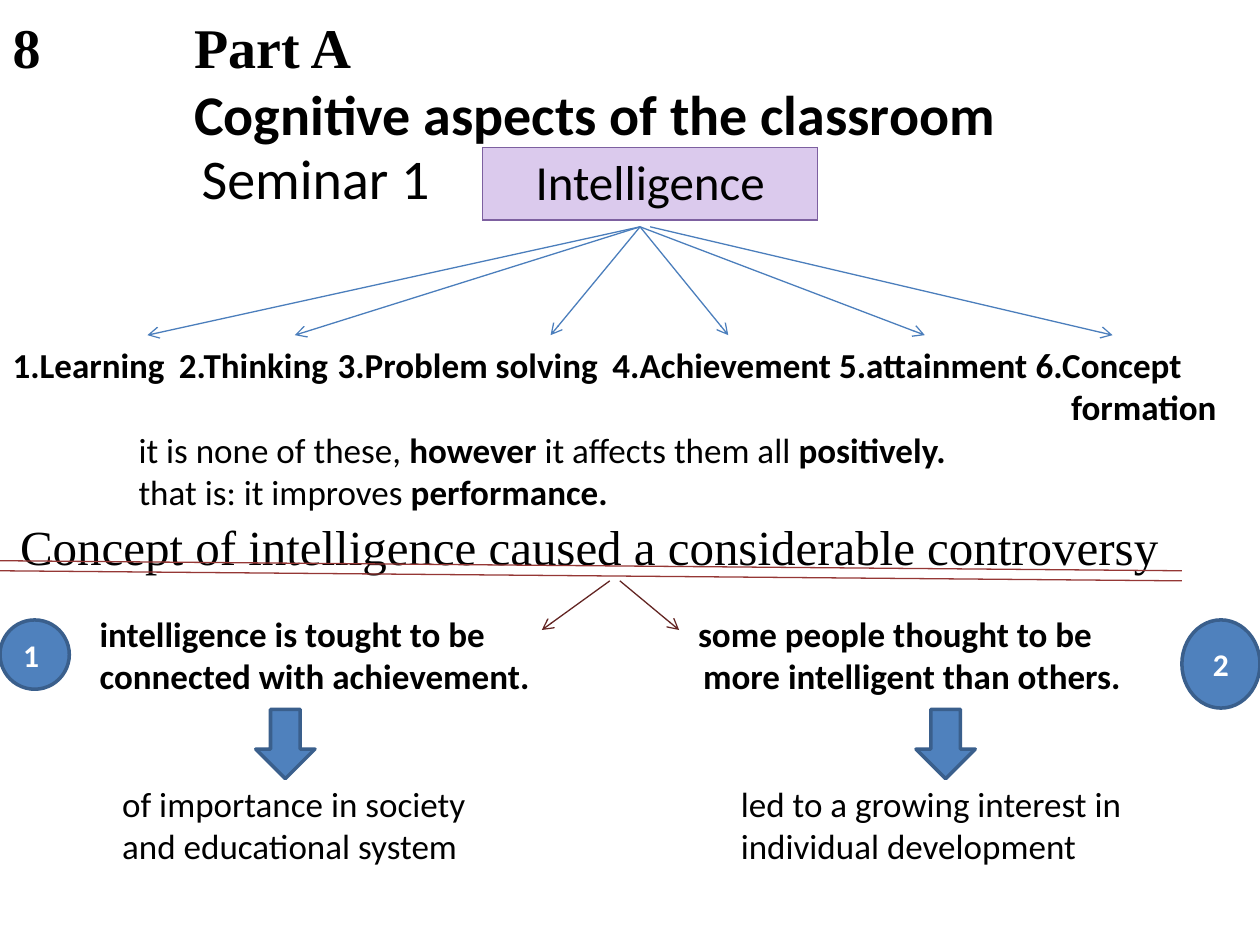
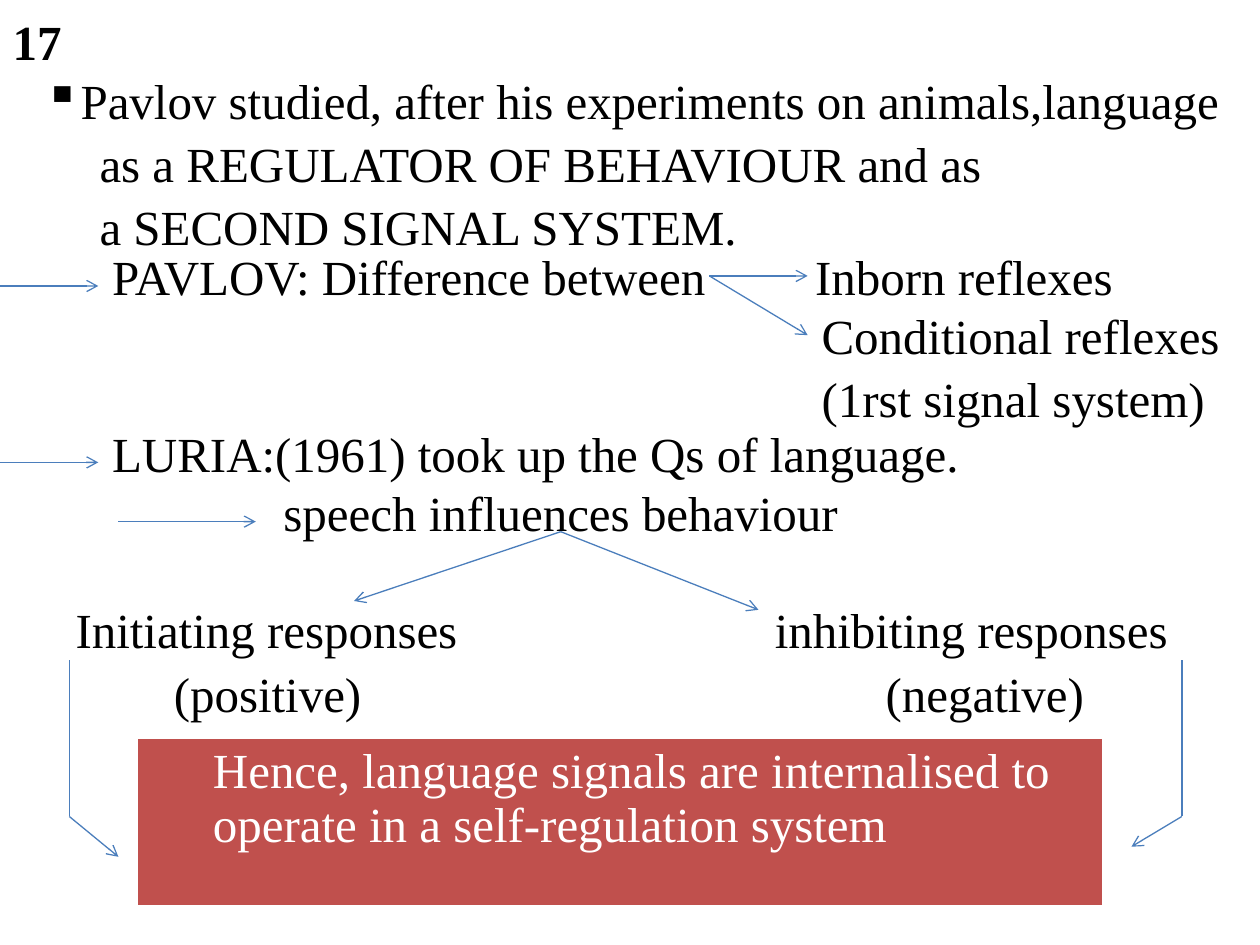
"""Build two seminar slides on intelligence and on language as a regulator."""
from dataclasses import dataclass

from lxml.etree import SubElement
from pptx import Presentation
from pptx.dml.color import RGBColor
from pptx.enum.shapes import MSO_CONNECTOR as Connector, MSO_SHAPE as Preset
from pptx.enum.text import MSO_ANCHOR as Anchor, MSO_AUTO_SIZE as AutoSize, PP_ALIGN as Align
from pptx.oxml.ns import qn
from pptx.slide import Slide
from pptx.text.text import TextFrame
from pptx.util import Inches, Pt

BLACK = RGBColor(0x00, 0x00, 0x00)
WHITE = RGBColor(0xFF, 0xFF, 0xFF)
BLUE = RGBColor(0x4F, 0x81, 0xBD)
BLUE_LINE = RGBColor(0x4B, 0x7E, 0xBC)
BLUE_EDGE = RGBColor(0x3A, 0x5F, 0x8C)
LILAC = RGBColor(0xDB, 0xCA, 0xED)
PURPLE = RGBColor(0x7D, 0x60, 0xA0)
RED = RGBColor(0xC0, 0x50, 0x4D)
RED_LINE = RGBColor(0x95, 0x37, 0x35)
DARK_RED = RGBColor(0x63, 0x25, 0x23)

SANS = "Calibri"
SERIF = "Times New Roman"
MARGIN = 0.1
FIRST_ROW = 0.09
ROW_PITCH = 0.467

Point = tuple[float, float]


@dataclass(frozen=True)
class Style:
    """Look of a run of text."""
    font: str
    size: float
    bold: bool = False
    color: RGBColor = BLACK
    gap: float = 0


@dataclass(frozen=True)
class Span:
    """Text with one style."""
    text: str
    style: Style


@dataclass(frozen=True)
class Line:
    """One paragraph with its left indent in inches."""
    spans: tuple[Span, ...]
    indent: float = 0
    bullet: str = ""


@dataclass(frozen=True)
class Block:
    """Lines of text placed on a slide, in inches."""
    left: float
    top: float
    width: float
    lines: tuple[Line, ...]


@dataclass(frozen=True)
class Stroke:
    """Straight line, with an arrowhead at its end unless plain."""
    start: Point
    end: Point
    color: RGBColor = BLUE_LINE
    arrow: bool = True


@dataclass(frozen=True)
class Figure:
    """Blue preset shape, with an optional number inside."""
    preset: Preset
    left: float
    top: float
    width: float
    height: float
    text: str = ""


@dataclass(frozen=True)
class Panel:
    """Table of a single cell."""
    left: float
    top: float
    width: float
    height: float
    fill: RGBColor
    line: Line
    align: Align = Align.LEFT
    border: RGBColor | None = None


HEADING_SERIF = Style(SERIF, 32, True)
HEADING = Style(SANS, 32, True)
SUBHEADING = Style(SANS, 32)
STRONG = Style(SANS, 20, True)
PLAIN = Style(SANS, 20)
STATEMENT = Style(SERIF, 28)
NUMBER = Style(SERIF, 28, True)
BODY = Style(SERIF, 28, gap=2.6)
BADGE = Style(SANS, 18, True, WHITE)


def line(text: str, style: Style, indent: float = 0, bullet: str = "") -> Line:
    """Return a paragraph made of one span."""
    return Line((Span(text, style),), indent, bullet)


def block(left: float, top: float, width: float, style: Style, *texts: str) -> Block:
    """Return a block whose lines share one style."""
    return Block(left, top, width, tuple(line(text, style) for text in texts))


def row_top(row: int) -> float:
    """Return the top of a text row on the language slide."""
    return FIRST_ROW + row * ROW_PITCH


def write(frame: TextFrame, lines: tuple[Line, ...], align: Align = Align.LEFT) -> None:
    """Fill a text frame run by run."""
    for index, item in enumerate(lines):
        para = frame.add_paragraph() if index else frame.paragraphs[0]
        para.alignment = align
        para.space_before = Pt(0)
        para.space_after = Pt(item.spans[0].style.gap)
        properties = para._p.get_or_add_pPr()
        properties.set("marL", str(Inches(item.indent)))
        if item.bullet:
            properties.set("indent", str(Inches(-0.25)))
            SubElement(properties, qn("a:buChar"), char=item.bullet)
        for span in item.spans:
            run = para.add_run()
            run.text = span.text
            font = run.font
            font.name, font.size, font.bold = span.style.font, Pt(span.style.size), span.style.bold
            font.color.rgb = span.style.color


def clear_insets(frame: TextFrame) -> None:
    """Make text start at the top left corner of its frame."""
    frame.margin_left = frame.margin_right = frame.margin_top = frame.margin_bottom = 0
    frame.word_wrap = True
    frame.auto_size = AutoSize.NONE
    frame.vertical_anchor = Anchor.TOP


def add_block(page: Slide, item: Block) -> None:
    """Add a text box for a block."""
    height = ROW_PITCH * len(item.lines)
    box = page.shapes.add_textbox(Inches(item.left), Inches(item.top),
                                  Inches(item.width), Inches(height))
    clear_insets(box.text_frame)
    write(box.text_frame, item.lines)


def set_title(page: Slide, item: Block) -> None:
    """Place and fill the title placeholder."""
    title = page.shapes.title
    title.left, title.top = Inches(item.left), Inches(item.top)
    title.width, title.height = Inches(item.width), Inches(1.04)
    clear_insets(title.text_frame)
    write(title.text_frame, item.lines)


def add_stroke(page: Slide, item: Stroke) -> None:
    """Add a thin connector."""
    ends = [Inches(value) for value in (*item.start, *item.end)]
    connector = page.shapes.add_connector(Connector.STRAIGHT, *ends)
    connector.line.color.rgb = item.color
    connector.line.width = Pt(0.75)
    if item.arrow:
        SubElement(connector.line._get_or_add_ln(), qn("a:tailEnd"), type="arrow")
    SubElement(connector._element.spPr, qn("a:effectLst"))


def add_figure(page: Slide, item: Figure) -> None:
    """Add a blue shape."""
    shape = page.shapes.add_shape(item.preset, Inches(item.left), Inches(item.top),
                                  Inches(item.width), Inches(item.height))
    shape.shadow.inherit = False
    shape.fill.solid()
    shape.fill.fore_color.rgb = BLUE
    shape.line.color.rgb = BLUE_EDGE
    shape.line.width = Pt(2)
    if item.text:
        shape.text_frame.vertical_anchor = Anchor.MIDDLE
        write(shape.text_frame, (line(item.text, BADGE),), Align.CENTER)


def add_panel(page: Slide, item: Panel) -> None:
    """Add a one-cell table."""
    table = page.shapes.add_table(1, 1, Inches(item.left), Inches(item.top),
                                  Inches(item.width), Inches(item.height)).table
    table.first_row = table.horz_banding = False
    cell = table.cell(0, 0)
    write(cell.text_frame, (item.line,), item.align)
    if item.border is not None:
        for side in ("a:lnL", "a:lnR", "a:lnT", "a:lnB"):
            edge = SubElement(cell._tc.get_or_add_tcPr(), qn(side), w=str(Pt(0.75)))
            SubElement(SubElement(edge, qn("a:solidFill")), qn("a:srgbClr"), val=str(item.border))
    cell.fill.solid()
    cell.fill.fore_color.rgb = item.fill


def draw(page: Slide, items: list[Block | Stroke | Figure | Panel]) -> None:
    """Draw items from back to front."""
    painters = {Block: add_block, Stroke: add_stroke, Figure: add_figure, Panel: add_panel}
    for item in items:
        painters[type(item)](page, item)


def build_intelligence(page: Slide) -> None:
    """Build the slide about intelligence."""
    set_title(page, Block(1.54, 0.1, 8, (line("Part A", HEADING_SERIF),
                                         line("Cognitive aspects of the classroom", HEADING))))
    aspects = [(0.1, "1.Learning"), (1.42, "2.Thinking"), (2.68, "3.Problem solving"),
               (4.86, "4.Achievement"), (6.66, "5.attainment")]
    effects = (
        Line((Span("it is none of these, ", PLAIN), Span("however", STRONG),
              Span(" it affects them all ", PLAIN), Span("positively.", STRONG))),
        Line((Span("that is: it improves ", PLAIN), Span("performance.", STRONG))),
    )
    hub = (5.08, 1.8)
    targets = (7.34, 5.78, 4.37, 2.34, 1.17)
    draw(page, [
        block(MARGIN, 0.1, 1, HEADING_SERIF, "8"),
        block(1.6, 1.14, 2.2, SUBHEADING, "Seminar 1"),
        *(block(left, 2.73, 2.4, STRONG, text) for left, text in aspects),
        Block(8.22, 2.73, 1.78, (line("6.Concept", STRONG), line("formation", STRONG, 0.28))),
        Block(1.1, 3.4, 8, effects),
        block(0.16, 4.1, 9.8, STATEMENT,
              "Concept of intelligence caused a considerable controversy"),
        block(0.79, 4.86, 4, STRONG, "intelligence is tought to be", "connected with achievement."),
        Block(5.54, 4.86, 3.8, (line("some people thought to be", STRONG),
                                line("more intelligent than others.", STRONG, 0.04))),
        block(0.97, 6.21, 4, PLAIN, "of importance in society", "and educational system"),
        block(5.88, 6.21, 4, PLAIN, "led to a growing interest in", "individual development"),
        Stroke((5.16, 1.8), (8.83, 2.66)),
        *(Stroke(hub, (target, 2.66)) for target in targets),
        Panel(3.83, 1.17, 2.66, 0.57, LILAC, line("Intelligence", Style(SANS, 28)),
              Align.CENTER, PURPLE),
        *(Figure(Preset.DOWN_ARROW, left, 5.63, 0.47, 0.55) for left in (2.03, 7.27)),
        *(Stroke((0, top), (9.38, top + 0.08), RED_LINE, False) for top in (4.53, 4.45)),
        Stroke((4.92, 4.61), (5.39, 5), DARK_RED),
        Stroke((4.84, 4.61), (4.3, 5), DARK_RED),
        Figure(Preset.OVAL, 0, 4.92, 0.55, 0.55, "1 "),
        Figure(Preset.OVAL, 9.38, 4.92, 0.62, 0.7, "2"),
    ])


def build_language(page: Slide) -> None:
    """Build the slide about language and behaviour."""
    study = (
        line("Pavlov studied, after his experiments on animals,language", BODY, 0.5, "▪"),
        line("as a REGULATOR OF BEHAVIOUR and as", BODY, 0.69),
        line("a SECOND SIGNAL SYSTEM.", BODY, 0.69),
    )
    fork = (5.63, 2.19)
    speech = (4.45, 4.22)
    draw(page, [
        block(MARGIN, row_top(0), 1, NUMBER, "17"),
        Block(MARGIN, row_top(1), 9.9, study),
        block(0.89, row_top(4), 5.2, BODY, "PAVLOV: Difference between"),
        block(6.47, row_top(4), 3.5, BODY, "Inborn reflexes"),
        block(6.52, row_top(5), 3.48, BODY, "Conditional reflexes", "(1rst signal system)"),
        block(0.89, row_top(7), 9, BODY, "LURIA:(1961) took up the Qs of language."),
        block(2.25, row_top(8), 7, BODY, "speech influences behaviour"),
        Block(0.6, row_top(10), 4, (line("Initiating responses", BODY),
                                    line("(positive)", BODY, 0.78))),
        Block(6.15, row_top(10), 3.8, (line("inhibiting responses", BODY),
                                       line("(negative)", BODY, 0.88))),
        *(Stroke(fork, (6.41, end)) for end in (2.19, 2.66)),
        *(Stroke((0, level), (0.78, level)) for level in (2.27, 3.67)),
        Stroke((0.94, 4.14), (2.03, 4.14)),
        *(Stroke(speech, end) for end in ((2.81, 4.77), (6.02, 4.84))),
        *(Stroke((side, 5.24), (side, 6.48), arrow=False) for side in (0.55, 9.38)),
        Stroke((0.55, 6.48), (0.94, 6.8)),
        Stroke((9.38, 6.48), (8.98, 6.72)),
        Panel(1.09, 5.86, 7.66, 1.33, RED,
              line("Hence, language signals are internalised to operate in a "
                   "self-regulation system", Style(SERIF, 28, color=WHITE), 0.5)),
    ])


def main() -> None:
    """Build and save the deck."""
    deck = Presentation()
    deck.slide_width, deck.slide_height = Inches(10), Inches(7.5)
    title_only, blank = deck.slide_layouts[5], deck.slide_layouts[6]
    build_intelligence(deck.slides.add_slide(title_only))
    build_language(deck.slides.add_slide(blank))
    deck.save("out.pptx")


if __name__ == "__main__":
    main()
